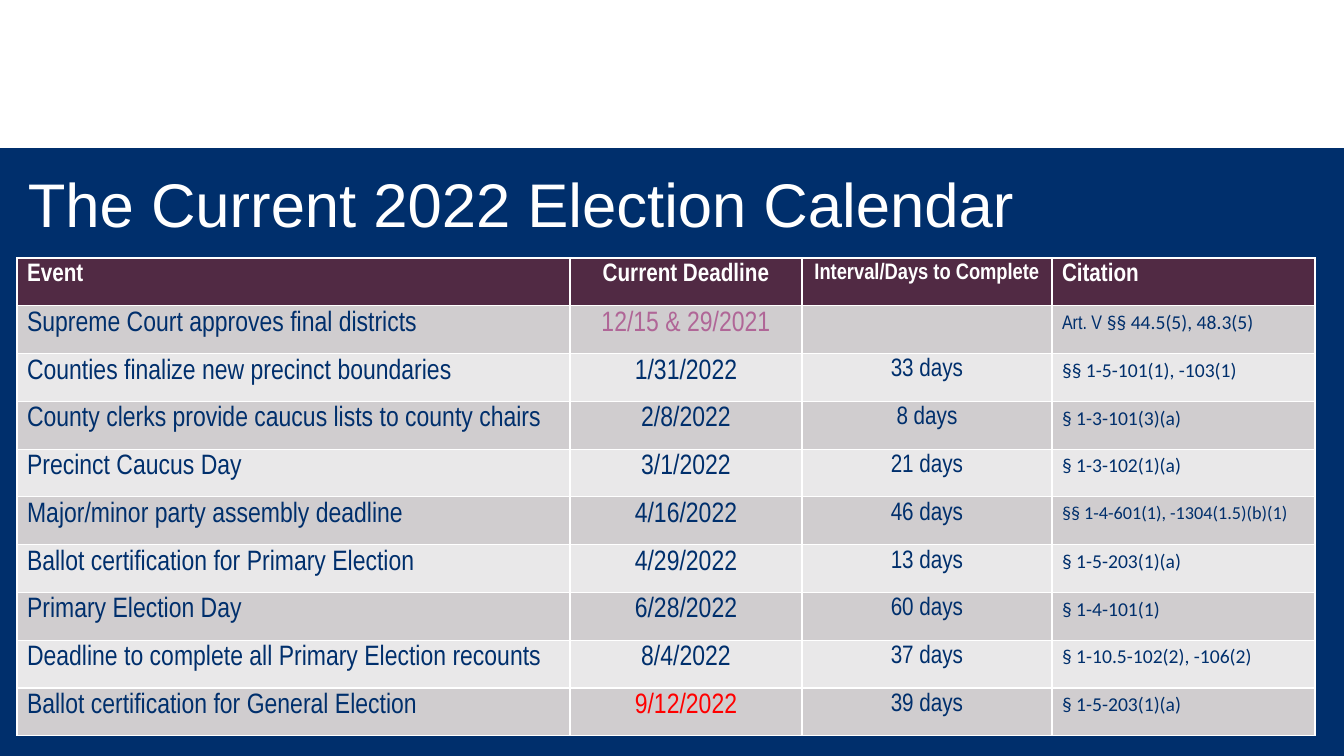
"""Builds the 2022 election calendar slide: a title over a table of deadlines."""
import pptx
import pptx.dml.color
import pptx.enum.shapes
import pptx.enum.text
import pptx.util

PX = 914400 / 100.8
COLORS = {
    "navy": "002F6C", "white": "FFFFFF", "plum": "512A44", "mauve": "B06697",
    "red": "FF0000", "dark_band": "D0CDCF", "light_band": "E9E8E9",
}
HEADINGS = ("Event", "Current Deadline", "Interval/Days to Complete", "Citation")
DEADLINES = [
    ("Supreme Court approves final districts", "12/15 & 29/2021", "", "Art. V §§ 44.5(5), 48.3(5)"),
    ("Counties finalize new precinct boundaries", "1/31/2022", "33 days", "§§ 1-5-101(1), -103(1)"),
    ("County clerks provide caucus lists to county chairs", "2/8/2022", "8 days", "§ 1-3-101(3)(a)"),
    ("Precinct Caucus Day", "3/1/2022", "21 days", "§ 1-3-102(1)(a)"),
    ("Major/minor party assembly deadline", "4/16/2022", "46 days", "§§ 1-4-601(1), -1304(1.5)(b)(1)"),
    ("Ballot certification for Primary Election", "4/29/2022", "13 days", "§ 1-5-203(1)(a)"),
    ("Primary Election Day", "6/28/2022", "60 days", "§ 1-4-101(1)"),
    ("Deadline to complete all Primary Election recounts", "8/4/2022", "37 days", "§ 1-10.5-102(2), -106(2)"),
    ("Ballot certification for General Election", "9/12/2022", "39 days", "§ 1-5-203(1)(a)"),
]
COLUMN_WIDTHS = (553, 232, 250, 263)
HEADING_SIZES = (18, 18, 16, 18)
BODY_SIZES = (20, 20, 18, 14)
DATE_COLORS = {"12/15 & 29/2021": "mauve", "9/12/2022": "red"}
ARTICLE = "Art. V "
LONG_CITATION = "§§ 1-4-601(1), -1304(1.5)(b)(1)"


def px(length):
    return pptx.util.Emu(round(length * PX))


def style(run, font, size, color, bold=False):
    run.font.name = font
    run.font.size = pptx.util.Pt(size)
    run.font.bold = bold
    run.font.color.rgb = pptx.dml.color.RGBColor.from_string(COLORS[color])


deck = pptx.Presentation()
deck.slide_width, deck.slide_height = px(1344), px(756)
slide = deck.slides.add_slide(deck.slide_layouts[6])
slide.background.fill.solid()
slide.background.fill.fore_color.rgb = pptx.dml.color.RGBColor.from_string(COLORS["navy"])

top_band = slide.shapes.add_shape(
    pptx.enum.shapes.MSO_SHAPE.RECTANGLE, 0, 0, px(1344), px(148))
top_band.shadow.inherit = False
top_band.fill.solid()
top_band.fill.fore_color.rgb = pptx.dml.color.RGBColor.from_string(COLORS["white"])
top_band.line.fill.background()

title = slide.shapes.add_textbox(px(18), px(157), px(1265), px(101)).text_frame
title.word_wrap = True
title.vertical_anchor = pptx.enum.text.MSO_ANCHOR.MIDDLE
title.text = "The Current 2022 Election Calendar"
title.paragraphs[0].line_spacing = 0.9
style(title.paragraphs[0].runs[0], "Arial", 44, "white")

rows = [HEADINGS, *DEADLINES]
calendar = slide.shapes.add_table(
    len(rows), len(HEADINGS), px(17), px(258), px(sum(COLUMN_WIDTHS)), px(478)).table
for column, width in zip(calendar.columns, COLUMN_WIDTHS):
    column.width = px(width)

for row_index, row in enumerate(rows):
    is_heading = row_index == 0
    band = "plum" if is_heading else ("light_band", "dark_band")[row_index % 2]
    for column_index, words in enumerate(row):
        cell = calendar.cell(row_index, column_index)
        cell.fill.solid()
        cell.fill.fore_color.rgb = pptx.dml.color.RGBColor.from_string(COLORS[band])
        paragraph = cell.text_frame.paragraphs[0]
        if column_index in (1, 2):
            paragraph.alignment = pptx.enum.text.PP_ALIGN.CENTER
        if is_heading:
            paragraph.text = words
            style(paragraph.runs[0], "Arial Narrow", HEADING_SIZES[column_index], "white", True)
        elif column_index == 3:
            size = 13 if words == LONG_CITATION else BODY_SIZES[3]
            if words.startswith(ARTICLE):
                article = paragraph.add_run()
                article.text = ARTICLE
                style(article, "Arial Narrow", size, "navy")
            sections = paragraph.add_run()
            sections.text = words.removeprefix(ARTICLE)
            style(sections, "Calibri", size, "navy")
        elif words:
            paragraph.text = words
            style(paragraph.runs[0], "Arial Narrow", BODY_SIZES[column_index],
                  DATE_COLORS.get(words, "navy"))

deck.save("out.pptx")
